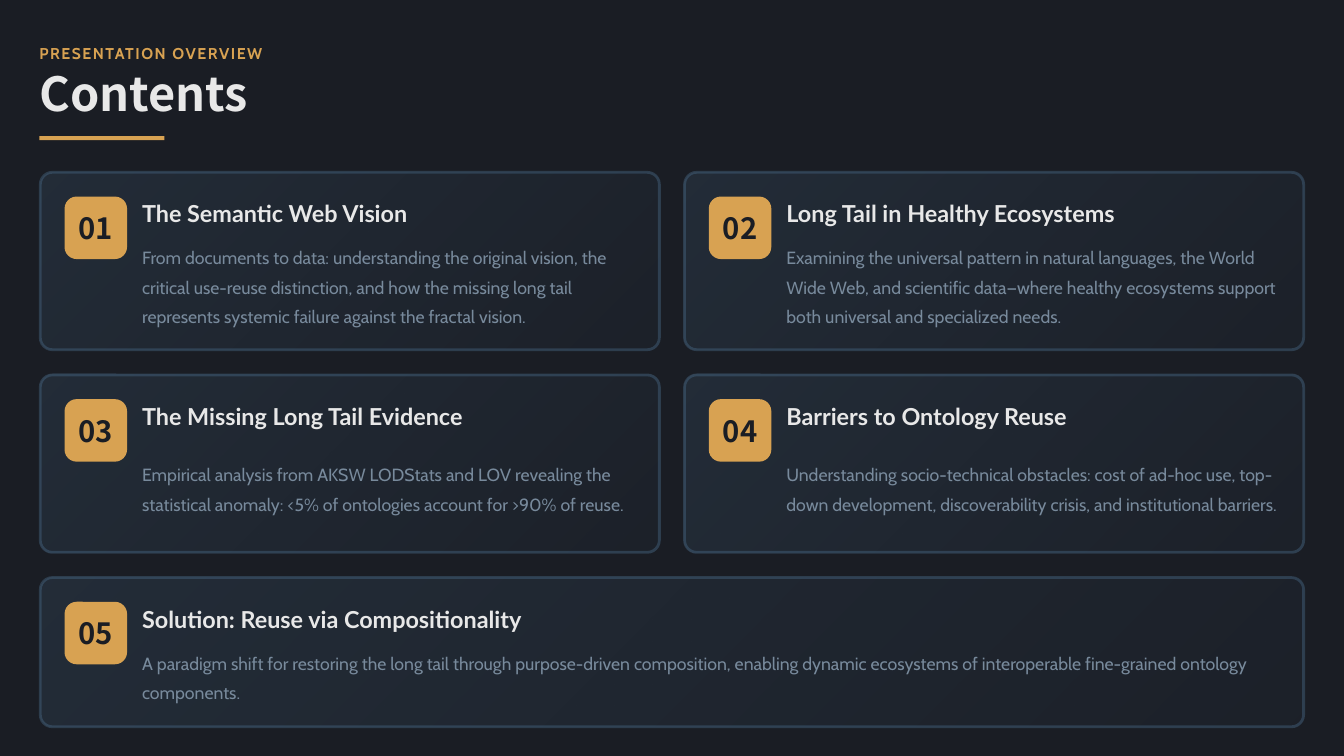
from lxml.etree import SubElement
from pptx import Presentation
from pptx.dml.color import RGBColor
from pptx.enum.shapes import MSO_SHAPE
from pptx.enum.text import MSO_ANCHOR, MSO_AUTO_SIZE, PP_ALIGN
from pptx.oxml.ns import qn
from pptx.util import Inches, Pt

# Content
KICKER = "PRESENTATION OVERVIEW"
TITLE = "Contents"
# (column, row, columns spanned, heading, description)
SECTIONS = [
    (0, 0, 1, "The Semantic Web Vision",
     "From documents to data: understanding the original vision, the critical use-reuse "
     "distinction, and how the missing long tail represents systemic failure against the "
     "fractal vision."),
    (1, 0, 1, "Long Tail in Healthy Ecosystems",
     "Examining the universal pattern in natural languages, the World Wide Web, and "
     "scientific data—where healthy ecosystems support both universal and specialized needs."),
    (0, 1, 1, "The Missing Long Tail Evidence",
     "Empirical analysis from AKSW LODStats and LOV revealing the statistical anomaly: "
     "<5% of ontologies account for >90% of reuse."),
    (1, 1, 1, "Barriers to Ontology Reuse",
     "Understanding socio-technical obstacles: cost of ad-hoc use, top-down development, "
     "discoverability crisis, and institutional barriers."),
    (0, 2, 2, "Solution: Reuse via Compositionality",
     "A paradigm shift for restoring the long tail through purpose-driven composition, "
     "enabling dynamic ecosystems of interoperable fine-grained ontology components."),
]

# Palette and fonts
DARK, GOLD, WHITE, GREY, BLUE = "1A1D24", "D8A252", "E8E8E8", "788A9C", "4A6D8C"
DISPLAY, HEADING, BODY = "Noto Sans CJK SC", "Lato", "Cabin"

# Grid, in inches
SLIDE_W, SLIDE_H = 13.33, 7.5
MARGIN, GRID_TOP, GAP = 0.4, 1.71, 0.25
COLUMN_W = (SLIDE_W - 2 * MARGIN - GAP) / 2
ROW_HEIGHTS = [1.76, 1.76, 1.48]
PADDING, BADGE, RADIUS = 0.24, 0.62, 0.12
TEXT_INDENT = 1.01


def rgb(value):
    return RGBColor.from_string(value)


def set_alpha(color_parent, percents):
    colors = color_parent.iter(qn("a:srgbClr"))
    for color, percent in zip(colors, percents):
        SubElement(color, qn("a:alpha"), val=str(percent * 1000))


def write(shape, text, size, font, color, bold=True, spacing=None,
          align=PP_ALIGN.LEFT, tracking=None):
    frame = shape.text_frame
    frame.auto_size = MSO_AUTO_SIZE.NONE
    frame.word_wrap = True
    frame.vertical_anchor = MSO_ANCHOR.MIDDLE
    frame.margin_left = frame.margin_right = frame.margin_top = frame.margin_bottom = 0
    paragraph = frame.paragraphs[0]
    paragraph.alignment = align
    if spacing:
        paragraph.line_spacing = spacing
    run = paragraph.add_run()
    run.text = text
    run.font.size, run.font.name, run.font.bold = Pt(size), font, bold
    run.font.color.rgb = rgb(color)
    properties = run.font._element
    SubElement(properties, qn("a:ea"), typeface=font)
    if tracking:
        properties.set("spc", str(round(tracking * 100)))


def add_text(slide, box, *args, **options):
    write(slide.shapes.add_textbox(*map(Inches, box)), *args, **options)


def add_block(slide, kind, box, fill=None):
    block = slide.shapes.add_shape(kind, *map(Inches, box))
    block.shadow.inherit = False
    if kind == MSO_SHAPE.ROUNDED_RECTANGLE:
        block.adjustments[0] = RADIUS / min(box[2:])
    if fill:
        block.fill.solid()
        block.fill.fore_color.rgb = rgb(fill)
        block.line.fill.background()
    return block


def add_card(slide, number, column, row, span, heading, description):
    left = MARGIN + column * (COLUMN_W + GAP)
    top = GRID_TOP + sum(ROW_HEIGHTS[:row]) + row * GAP
    width = span * COLUMN_W + (span - 1) * GAP
    height = ROW_HEIGHTS[row]

    # Translucent panel
    panel = add_block(slide, MSO_SHAPE.ROUNDED_RECTANGLE, (left, top, width, height))
    panel.fill.gradient()
    panel.fill.gradient_angle = 315
    for stop, position in zip(panel.fill.gradient_stops, (0, 1)):
        stop.color.rgb = rgb(BLUE)
        stop.position = position
    panel.line.color.rgb = rgb(BLUE)
    panel.line.width = Pt(2)
    set_alpha(panel._element.spPr, (20, 5, 40))

    # Number badge
    inner_top = top + PADDING
    badge = add_block(slide, MSO_SHAPE.ROUNDED_RECTANGLE,
                      (left + PADDING, inner_top, BADGE, BADGE), GOLD)
    write(badge, f"{number:02d}", 20.9, DISPLAY, DARK, align=PP_ALIGN.CENTER)

    # Heading and description
    text_left = left + TEXT_INDENT
    add_text(slide, (text_left, inner_top, width - 1.14, 0.31),
             heading, 16.7, HEADING, WHITE, spacing=1.1)
    add_text(slide, (text_left, top + 0.67, width - 1.17, height - 0.91),
             description, 12.6, BODY, GREY, bold=False, spacing=1.4)


def main():
    deck = Presentation()
    deck.slide_width, deck.slide_height = Inches(SLIDE_W), Inches(SLIDE_H)
    slide = deck.slides.add_slide(deck.slide_layouts[5])
    slide.background.fill.solid()
    slide.background.fill.fore_color.rgb = rgb(DARK)

    # Header
    add_text(slide, (0.39, 0.39, 12.64, 0.23), KICKER, 11.2, BODY, GOLD,
             spacing=1.3, tracking=1.1)
    title = slide.shapes.title
    title.left, title.top, title.width, title.height = map(Inches, (0.39, 0.74, 12.79, 0.46))
    write(title, TITLE, 33.5, DISPLAY, WHITE, spacing=0.8)
    add_block(slide, MSO_SHAPE.RECTANGLE, (0.39, 1.35, 1.24, 0.04), GOLD)

    # Section cards
    for number, section in enumerate(SECTIONS, 1):
        add_card(slide, number, *section)

    deck.save("out.pptx")


if __name__ == "__main__":
    main()
